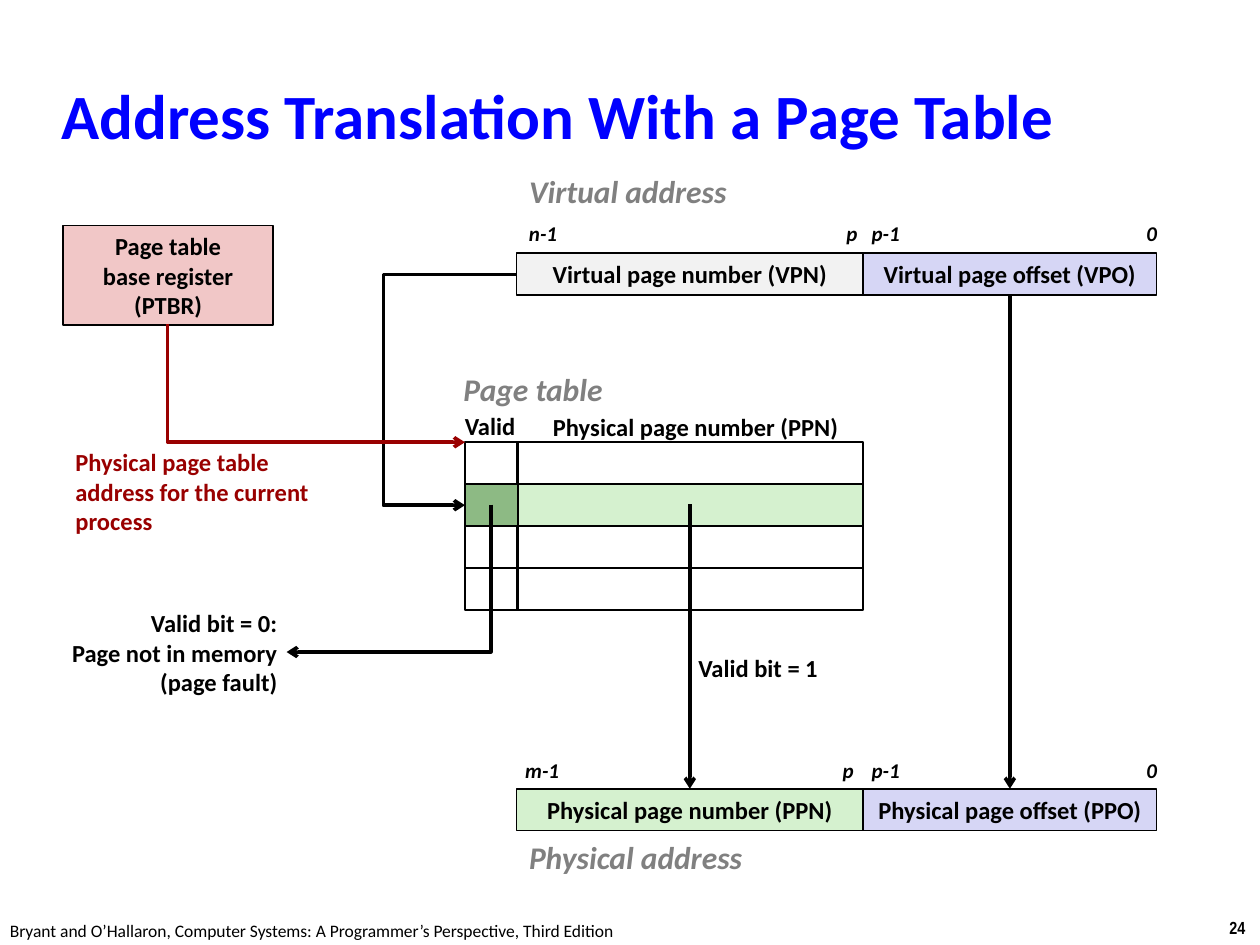
from lxml.etree import SubElement
from pptx import Presentation
from pptx.dml.color import RGBColor
from pptx.enum.shapes import MSO_CONNECTOR, MSO_SHAPE
from pptx.enum.text import MSO_ANCHOR, MSO_AUTO_SIZE, PP_ALIGN
from pptx.oxml.ns import qn
from pptx.util import Inches, Pt


def color(hex_text):
    return RGBColor.from_string(hex_text)


def write(shape, text, size, ink="000000", bold=True, italic=False,
          align=PP_ALIGN.LEFT, font="Calibri"):
    shape.text_frame.text = text
    for paragraph in shape.text_frame.paragraphs:
        paragraph.alignment = align
        paragraph.font.name = font
        paragraph.font.size = Pt(size)
        paragraph.font.bold = bold
        paragraph.font.italic = italic
        paragraph.font.color.rgb = color(ink)


prs = Presentation()
prs.slide_width, prs.slide_height = Inches(10), Inches(7.5)
slide = prs.slides.add_slide(prs.slide_layouts[6])
shapes = slide.shapes

# Column and row geometry shared by the addresses and the page table
valid_left, number_left, offset_left = 3.69, 4.1, 6.85
valid_width, number_width, offset_width = 0.42, 2.75, 2.33
row_height, table_top = 0.333, 3.51
virtual_top, physical_top = 2.01, 6.26
RIGHT = PP_ALIGN.RIGHT

# Title
title = shapes.add_textbox(Inches(0.39), Inches(0.49), Inches(8.3), Inches(0.83))
title.text_frame.word_wrap = True
title.text_frame.vertical_anchor = MSO_ANCHOR.MIDDLE
write(title, "Address Translation With a Page Table", 36, "0000FF")

# Boxes: address fields, base register and page table rows
boxes = [
    ("Virtual page number (VPN)", number_left, virtual_top, number_width, row_height, "F2F2F2"),
    ("Virtual page offset (VPO)", offset_left, virtual_top, offset_width, row_height, "D6D6F5"),
    ("Physical page number (PPN)", number_left, physical_top, number_width, row_height, "D5F1CF"),
    ("Physical page offset (PPO)", offset_left, physical_top, offset_width, row_height, "D6D6F5"),
    ("Page table\vbase register\n(PTBR)", 0.5, 1.79, 1.67, 0.79, "F1C7C7"),
]
row_fills = [(None, None), ("D5F1CF", "8DBA84"), (None, None), (None, None)]
for row, (number_fill, valid_fill) in enumerate(row_fills):
    top = table_top + row * row_height
    boxes.append(("", number_left, top, number_width, row_height, number_fill))
    boxes.append(("", valid_left, top, valid_width, row_height, valid_fill))

fields = {}
for text, left, top, width, height, fill in boxes:
    box = shapes.add_shape(MSO_SHAPE.RECTANGLE, Inches(left), Inches(top),
                           Inches(width), Inches(height))
    box.shadow.inherit = False
    box.line.color.rgb = color("000000")
    box.line.width = Pt(1)
    if fill:
        box.fill.solid()
        box.fill.fore_color.rgb = color(fill)
    else:
        box.fill.background()
    if text:
        write(box, text, 14, align=PP_ALIGN.CENTER)
        fields[text] = box

# Arrows: kind, start, end, colour
number_middle = number_left + number_width / 2
offset_middle = offset_left + offset_width / 2
STRAIGHT, ELBOW = MSO_CONNECTOR.STRAIGHT, MSO_CONNECTOR.ELBOW
arrows = []
for kind, x1, y1, x2, y2, ink in [
    (ELBOW, 4.1, 2.18, 3.69, 4.01, "000000"),
    (STRAIGHT, offset_middle, 2.35, offset_middle, physical_top, "000000"),
    (STRAIGHT, number_middle, 4, number_middle, physical_top, "000000"),
    (ELBOW, 2.5, 3.78, 4.12, 4.95, "000000"),
    (ELBOW, 2.04, 1.86, 2.98, 4.22, "990000"),
]:
    arrow = shapes.add_connector(kind, Inches(x1), Inches(y1), Inches(x2), Inches(y2))
    arrow.line.color.rgb = color(ink)
    arrow.line.width = Pt(2)
    SubElement(arrow.line._get_or_add_ln(), qn("a:tailEnd")).set("type", "arrow")
    SubElement(arrow._element.spPr, qn("a:effectLst"))
    arrows.append(arrow)
vpn_arrow, offset_arrow, ppn_arrow, fault_arrow, ptbr_arrow = arrows

offset_arrow.begin_connect(fields["Virtual page offset (VPO)"], 2)
offset_arrow.end_connect(fields["Physical page offset (PPO)"], 0)
ppn_arrow.end_connect(fields["Physical page number (PPN)"], 0)

# The VPN arrow swings out to the left of the page table
vpn_geometry = vpn_arrow._element.spPr.find(qn("a:prstGeom"))
bend = SubElement(vpn_geometry.find(qn("a:avLst")), qn("a:gd"))
bend.set("name", "adj1")
bend.set("fmla", "val 258000")

# The fault and PTBR arrows have a single corner, in a turned frame
for arrow, width, height, degrees, flip in [(fault_arrow, 1.17, 1.62, 90, "0"),
                                            (ptbr_arrow, 0.94, 2.36, 270, "1")]:
    arrow.width, arrow.height = Inches(width), Inches(height)
    arrow._element.spPr.find(qn("a:prstGeom")).set("prst", "bentConnector2")
    frame = arrow._element.spPr.find(qn("a:xfrm"))
    frame.set("rot", str(degrees * 60000))
    frame.set("flipH", flip)

# Labels: text, left, top, width, height, style
heading = dict(size=18, ink="808080", italic=True)
label = dict(size=14)
bit = dict(size=12, italic=True)
labels = [
    ("Virtual address", 4.1, 1.32, 1.78, 0.4, heading),
    ("Physical address", 4.1, 6.6, 1.91, 0.4, heading),
    ("Page table", 3.58, 2.89, 1.42, 0.4, heading),
    ("Valid", 3.59, 3.21, 0.61, 0.34, label),
    ("Physical page number (PPN)", 4.29, 3.22, 2.48, 0.34, label),
    ("Physical page table\naddress for the current\nprocess", 0.5, 3.5, 2.08, 0.81,
     dict(size=14, ink="990000")),
    ("Valid bit = 0:\nPage not in memory\n(page fault)", 0.44, 4.78, 1.86, 0.81,
     dict(size=14, align=RIGHT)),
    ("Valid bit = 1", 5.42, 5.13, 1.17, 0.34, dict(size=14, align=RIGHT)),
    ("24", 9.66, 7.23, 0.34, 0.27, dict(size=10, font="Arial Narrow")),
    ("Bryant and O’Hallaron, Computer Systems: A Programmer’s Perspective, Third Edition",
     -0.02, 7.25, 5.08, 0.27, dict(size=10, bold=False)),
]
# Bit positions above both addresses
for top, high_bit, high_left, high_width, p_left in [(1.7, "n-1", 4.1, 0.47, 6.62),
                                                     (5.96, "m-1", 4.07, 0.51, 6.59)]:
    labels += [
        (high_bit, high_left, top, high_width, 0.3, bit),
        ("p", p_left, top, 0.33, 0.3, bit),
        ("p-1", 6.82, top, 0.47, 0.3, bit),
        ("0", 9, top, 0.33, 0.3, bit),
    ]
for text, left, top, width, height, style in labels:
    note = shapes.add_textbox(Inches(left), Inches(top), Inches(width), Inches(height))
    note.text_frame.word_wrap = False
    note.text_frame.auto_size = MSO_AUTO_SIZE.SHAPE_TO_FIT_TEXT
    write(note, text, **style)

prs.save("out.pptx")
